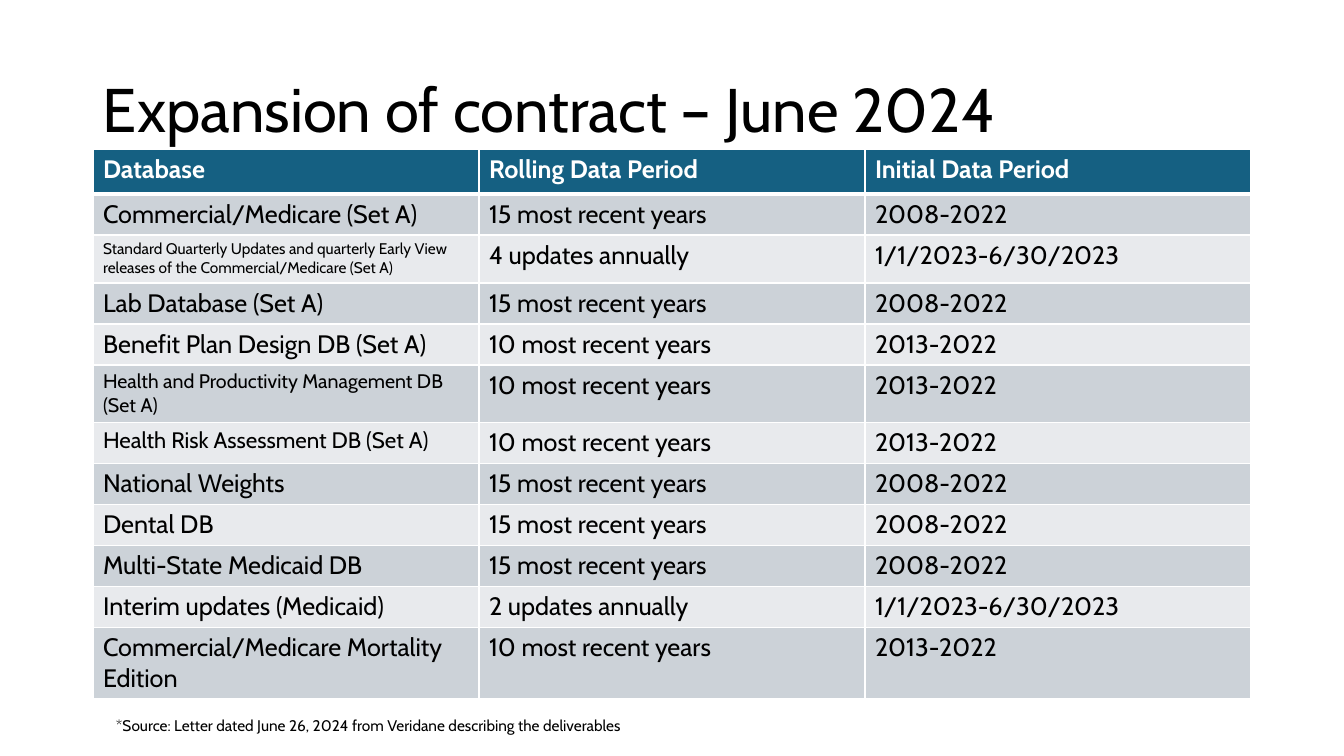
from lxml import etree
from pptx import Presentation, util as u
from pptx.dml.color import RGBColor
from pptx.enum import text
from pptx.oxml.ns import qn

EMU_PER_PX = 914400 / 100.8
FONT = "Cabin"
COLORS = {"ink": "000000", "white": "FFFFFF", "header": "156082",
          "odd": "CCD2D8", "even": "E8EAED"}
HEADINGS = ["Database", "Rolling Data Period", "Initial Data Period"]
COLUMN_WIDTH = 386
HEADER_HEIGHT = 45
# database, its text size, rolling period, initial period, row height
DATABASES = [
    ("Commercial/Medicare (Set A)", 18, "15 most recent years", "2008-2022", 41),
    ("Standard Quarterly Updates and quarterly Early View releases of the "
     "Commercial/Medicare (Set A)", 11, "4 updates annually", "1/1/2023-6/30/2023", 48),
    ("Lab Database (Set A)", 18, "15 most recent years", "2008-2022", 41),
    ("Benefit Plan Design DB (Set A)", 18, "10 most recent years", "2013-2022", 41),
    ("Health and Productivity Management DB (Set A)", 14,
     "10 most recent years", "2013-2022", 57),
    ("Health Risk Assessment DB (Set A)", 16, "10 most recent years", "2013-2022", 41),
    ("National Weights", 18, "15 most recent years", "2008-2022", 41),
    ("Dental DB", 18, "15 most recent years", "2008-2022", 41),
    ("Multi-State Medicaid DB", 18, "15 most recent years", "2008-2022", 41),
    ("Interim updates (Medicaid)", 18, "2 updates annually", "1/1/2023-6/30/2023", 41),
    ("Commercial/Medicare Mortality Edition", 18,
     "10 most recent years", "2013-2022", 71),
]


def px(n):
    return u.Emu(round(n * EMU_PER_PX))


def rgb(name):
    return RGBColor.from_string(COLORS[name])


def add_run(p, words, size, color="ink", bold=False):
    r = p.add_run()
    r.text = words
    r.font.name = FONT
    r.font.size = u.Pt(size)
    r.font.bold = bold
    r.font.color.rgb = rgb(color)


def add_text(s, box, words, size, anchor=text.MSO_ANCHOR.TOP, spacing=1.0):
    tf = s.shapes.add_textbox(*map(px, box)).text_frame
    tf.word_wrap = True
    tf.vertical_anchor = anchor
    p = tf.paragraphs[0]
    p.line_spacing = spacing
    add_run(p, words, size)


def set_borders(cell, bottom):
    """Draw white borders, 1 pt wide except for the given bottom width."""
    tc_pr = cell._tc.get_or_add_tcPr()
    widths = {"a:lnL": 1, "a:lnR": 1, "a:lnT": 1, "a:lnB": bottom}
    for i, (tag, width) in enumerate(widths.items()):
        ln = etree.Element(qn(tag), w=str(u.Pt(width)))
        fill = etree.SubElement(ln, qn("a:solidFill"))
        etree.SubElement(fill, qn("a:srgbClr"), val=COLORS["white"])
        tc_pr.insert(i, ln)


def fill_cell(cell, words, size, fill, header=False):
    cell.fill.solid()
    cell.fill.fore_color.rgb = rgb(fill)
    set_borders(cell, 3 if header else 1)
    add_run(cell.text_frame.paragraphs[0], words, size,
            "white" if header else "ink", header)


def add_database_table(s, left, top):
    heights = [HEADER_HEIGHT] + [row[-1] for row in DATABASES]
    table = s.shapes.add_table(
        len(heights), len(HEADINGS), px(left), px(top),
        px(COLUMN_WIDTH * len(HEADINGS)), px(sum(heights))).table
    for column in table.columns:
        column.width = px(COLUMN_WIDTH)
    for row, height in zip(table.rows, heights):
        row.height = px(height)
    for c, heading in enumerate(HEADINGS):
        fill_cell(table.cell(0, c), heading, 18, "header", header=True)
    for r, (name, size, rolling, initial, _) in enumerate(DATABASES, 1):
        fill = "odd" if r % 2 else "even"
        for c, (words, pt) in enumerate([(name, size), (rolling, 18), (initial, 18)]):
            fill_cell(table.cell(r, c), words, pt, fill)


def main():
    prs = Presentation()
    prs.slide_width, prs.slide_height = px(1344), px(756)
    s = prs.slides.add_slide(prs.slide_layouts[6])
    add_text(s, (93, 40, 1159, 146), "Expansion of contract – June 2024", 44,
             text.MSO_ANCHOR.MIDDLE, 0.9)
    add_database_table(s, 93, 149)
    add_text(s, (106, 711, 1131, 29),
             "*Source: Letter dated June 26, 2024 from Veridane describing the deliverables", 11)
    prs.save("out.pptx")


if __name__ == "__main__":
    main()
